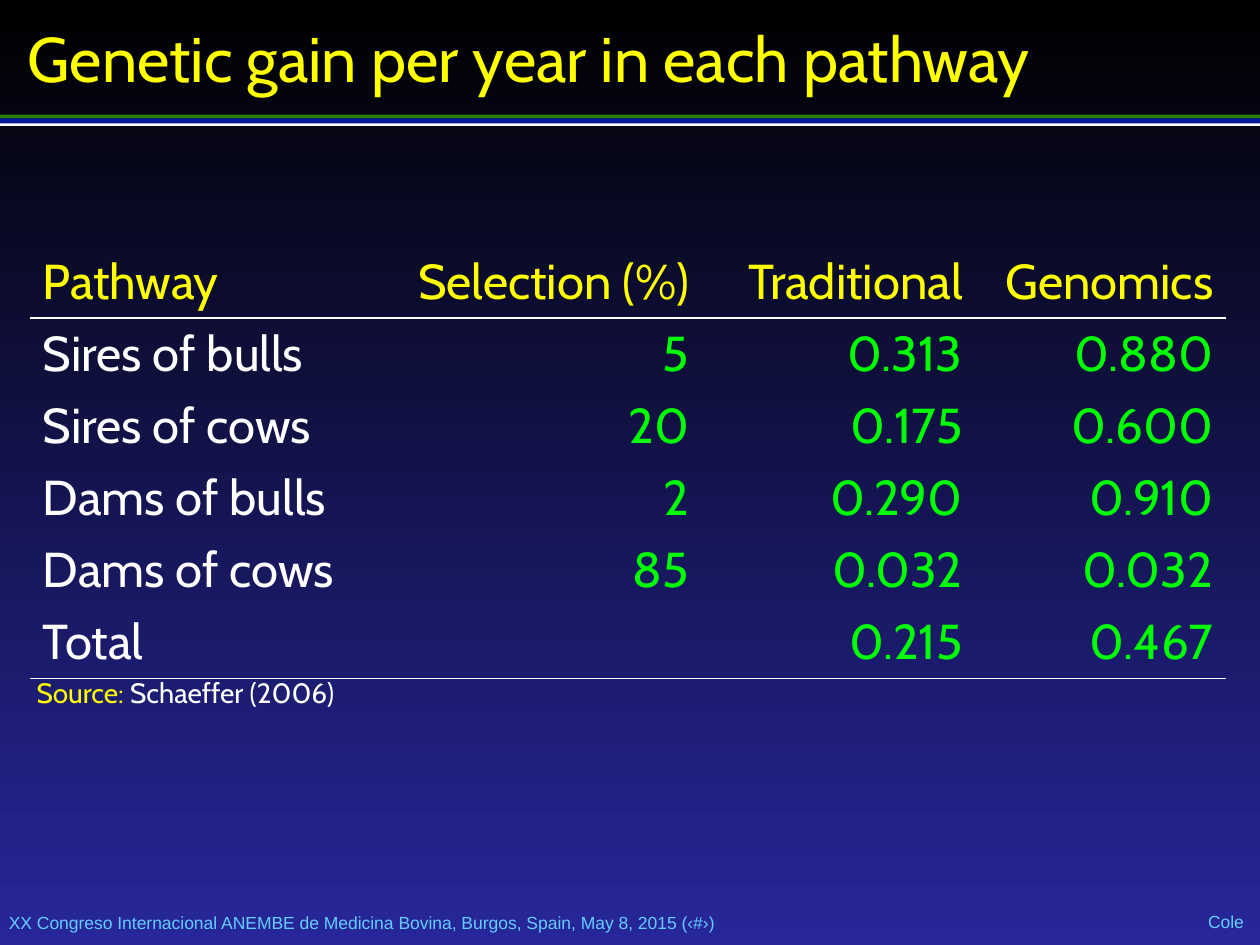
import pptx
import pptx.util
import pptx.dml.color
import pptx.enum.shapes
import pptx.enum.text
import pptx.oxml
import pptx.oxml.ns

Inches, Pt = pptx.util.Inches, pptx.util.Pt
ALIGN, ANCHOR = pptx.enum.text.PP_ALIGN, pptx.enum.text.MSO_ANCHOR
YELLOW, WHITE, GREEN, SKY = "FFFF00", "FFFFFF", "00FF00", "66CCFF"


def rgb(code):
    return pptx.dml.color.RGBColor.from_string(code)


def write(frame, runs, size, font="Cabin", align=ALIGN.LEFT, inset=None, **form):
    """Fill a frame with one paragraph of (text, colour) runs."""
    if inset is not None:
        for side in ("left", "top", "right", "bottom"):
            form["margin_" + side] = Inches(inset)
    for name, value in form.items():
        setattr(frame, name, value)
    par = frame.paragraphs[0]
    par.alignment = align
    for text, color in runs:
        run = par.add_run()
        run.text = text
        for name, value in {"size": Pt(size), "name": font}.items():
            setattr(run.font, name, value)
        run.font.color.rgb = rgb(color)


deck = pptx.Presentation()
deck.slide_width, deck.slide_height = Inches(10), Inches(7.5)
slide = deck.slides.add_slide(deck.slide_layouts[5])
shapes = slide.shapes

# Background gradient, top to bottom
back = slide.background.fill
back.gradient()
back.gradient_angle = 270
for stop, (place, color) in zip(back.gradient_stops, [(0, "000000"), (1, "27279B")]):
    stop.position = place
    stop.color.rgb = rgb(color)

# Bars under the title
for top, high, color in [(0.91, 0.03, "2A7E00"), (0.97, 0.03, WHITE), (0.94, 0.04, "001799")]:
    bar = shapes.add_shape(pptx.enum.shapes.MSO_SHAPE.RECTANGLE,
                           0, Inches(top), Inches(10), Inches(high))
    bar.shadow.inherit = False
    bar.fill.solid()
    bar.fill.fore_color.rgb = rgb(color)
    bar.line.fill.background()

# Title
title = shapes.title
for name, value in {"left": 0.17, "top": 0.1, "width": 9.66, "height": 0.71}.items():
    setattr(title, name, Inches(value))
write(title.text_frame, [("Genetic gain per year in each pathway", YELLOW)], 36,
      inset=0.05, vertical_anchor=ANCHOR.MIDDLE, word_wrap=True)

# Table
rows = [
    ("Pathway", "Selection (%)", "Traditional", "Genomics"),
    ("Sires of bulls", "5", "0.313", "0.880"),
    ("Sires of cows", "20", "0.175", "0.600"),
    ("Dams of bulls", "2", "0.290", "0.910"),
    ("Dams of cows", "85", "0.032", "0.032"),
    ("Total", "", "0.215", "0.467"),
]
grid = shapes.add_table(len(rows), 4, Inches(0.24), Inches(1.95),
                        Inches(9.49), Inches(3.4)).table
grid.first_row = grid.horz_banding = False
style = grid._tbl.tblPr.find(pptx.oxml.ns.qn("a:tableStyleId"))
style.text = "{2D5ABB26-0587-4C30-8999-92F81FD0307C}"  # no style, no grid
for col, wide in zip(grid.columns, [2.84, 2.49, 2.17, 1.99]):
    col.width = Inches(wide)

rule = (f'<a:lnB {pptx.oxml.ns.nsdecls("a")} w="12700"><a:solidFill>'
        f'<a:srgbClr val="{WHITE}"/></a:solidFill></a:lnB>')
for i, row in enumerate(rows):
    for j, text in enumerate(row):
        cell = grid.cell(i, j)
        cell.fill.background()
        color = YELLOW if i == 0 else WHITE if j == 0 else GREEN
        if text:
            write(cell.text_frame, [(text, color)], 28,
                  align=ALIGN.RIGHT if j else ALIGN.LEFT)
        if i in (0, len(rows) - 1):
            cell._tc.get_or_add_tcPr().insert(0, pptx.oxml.parse_xml(rule))

# Source line and footer
meeting = "XX Congreso Internacional ANEMBE de Medicina Bovina, Burgos, Spain, May 8, 2015 (‹#›)"
foot = {"size": 10, "font": "Arial", "inset": 0, "vertical_anchor": ANCHOR.MIDDLE}
notes = [
    ((0.24, 5.31, 2.58, 0.37), [("Source: ", YELLOW), ("Schaeffer (2006)", WHITE)],
     {"size": 16, "inset": 0.05, "word_wrap": False}),
    ((0.07, 7.24, 8.09, 0.17), [(meeting, SKY)], {**foot, "word_wrap": True}),
    ((9.58, 7.24, 0.3, 0.15), [("Cole", SKY)],
     {**foot, "align": ALIGN.CENTER, "word_wrap": False}),
]
for place, runs, form in notes:
    box = shapes.add_textbox(*map(Inches, place))
    write(box.text_frame, runs, **form)

deck.save("out.pptx")
